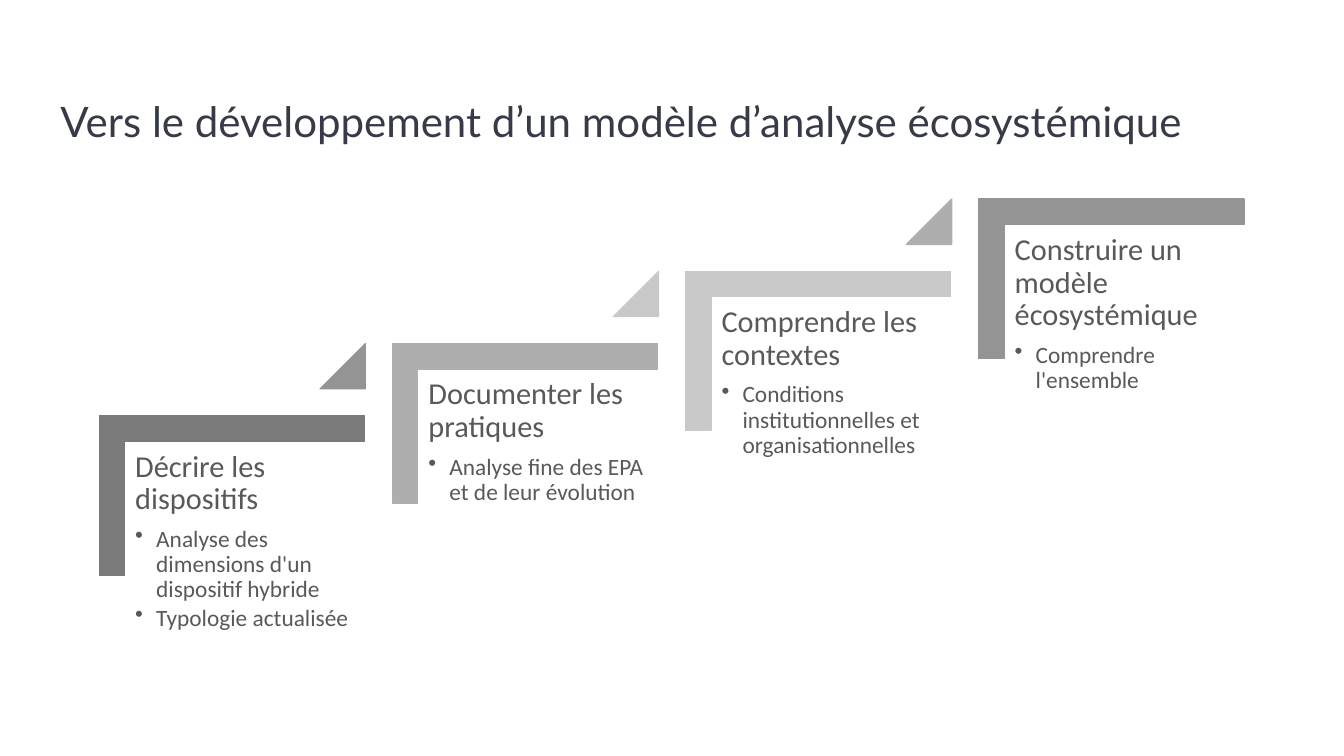
"""Build a slide showing four rising steps towards an ecosystemic model."""
from dataclasses import dataclass

from lxml import etree
from pptx import Presentation
from pptx import util as u
from pptx.dml.color import RGBColor
from pptx.enum import shapes, text
from pptx.oxml.ns import qn


@dataclass(frozen=True)
class Theme:
    """Hold the fonts, type sizes and colours."""
    title_font: str = "Lato"
    body_font: str = "Calibri"
    title_size: int = 36
    heading_size: int = 26
    bullet_size: int = 20
    title_color: str = "373B48"
    body_color: str = "595959"
    step_colors: tuple = ("7A7A7A", "AEAEAE", "C9C9C9", "949494")
    arrow_colors: tuple = ("949494", "C9C9C9", "AEAEAE")


class SlideBuilder:
    """Draw styled elements on the current slide."""

    def __init__(self, slide, theme):
        self.slide = slide
        self.theme = theme

    def add_run(self, paragraph, content, font_name, size, color):
        """Add one styled run to a paragraph."""
        run = paragraph.add_run()
        run.text = content
        run.font.name = font_name
        run.font.size = u.Pt(size)
        run.font.color.rgb = RGBColor.from_string(color)

    def add_text_frame(self, left, top, width, height, inset, wrap):
        """Add a text box and return its frame."""
        box = self.slide.shapes.add_textbox(*map(u.Inches, (left, top, width, height)))
        frame = box.text_frame
        frame.word_wrap = wrap
        frame.auto_size = text.MSO_AUTO_SIZE.NONE
        frame.vertical_anchor = text.MSO_ANCHOR.TOP
        frame.margin_left = frame.margin_right = u.Inches(inset)
        frame.margin_top = frame.margin_bottom = u.Inches(inset)
        return frame

    def add_title(self, content):
        """Add the slide title."""
        theme = self.theme
        frame = self.add_text_frame(0.72, 0.97, 13.5, 0.78, 0, False)
        paragraph = frame.paragraphs[0]
        paragraph.line_spacing = u.Pt(55.5)
        self.add_run(paragraph, content, theme.title_font, theme.title_size, theme.title_color)

    def add_solid(self, kind, left, top, width, height, color, adjustments, rotation=0):
        """Add a preset shape in one solid colour."""
        shape = self.slide.shapes.add_shape(kind, *map(u.Inches, (left, top, width, height)))
        shape.shadow.inherit = False
        shape.rotation = rotation
        for index, value in enumerate(adjustments):
            shape.adjustments[index] = value
        shape.fill.solid()
        shape.fill.fore_color.rgb = RGBColor.from_string(color)
        shape.line.color.rgb = RGBColor.from_string(color)
        shape.line.width = u.Pt(1)

    def add_bullet(self, paragraph):
        """Give a paragraph a hanging bullet."""
        paragraph.level = 1
        properties = paragraph._p.get_or_add_pPr()
        properties.set("marL", str(u.Inches(0.25)))
        properties.set("indent", str(-u.Inches(0.25)))
        etree.SubElement(properties, qn("a:buChar")).set("char", "•")

    def add_step_text(self, left, top, heading, bullets):
        """Add a step heading followed by its bullets."""
        theme = self.theme
        frame = self.add_text_frame(left, top, 2.85, 2.5, 0.11, True)
        paragraph = frame.paragraphs[0]
        paragraph.line_spacing = 0.9
        paragraph.space_after = u.Pt(theme.heading_size * 0.35)
        self.add_run(paragraph, heading, theme.body_font, theme.heading_size, theme.body_color)
        for bullet in bullets:
            paragraph = frame.add_paragraph()
            self.add_bullet(paragraph)
            paragraph.line_spacing = 0.9
            paragraph.space_after = u.Pt(theme.bullet_size * 0.15)
            self.add_run(paragraph, bullet, theme.body_font, theme.bullet_size, theme.body_color)

    def add_step(self, index, heading, bullets):
        """Add one stair step, with an arrow unless it is the last."""
        theme = self.theme
        across, rise = 3.49 * index, 0.86 * index
        self.add_solid(shapes.MSO_SHAPE.CORNER, 1.81 + across, 4.32 - rise, 1.9, 3.16,
                       theme.step_colors[index], (0.16, 0.16), 90)
        self.add_step_text(1.5 + across, 5.26 - rise, heading, bullets)
        if index < len(theme.arrow_colors):
            self.add_solid(shapes.MSO_SHAPE.ISOSCELES_TRIANGLE, 3.81 + across, 4.09 - rise,
                           0.54, 0.54, theme.arrow_colors[index], (1,))


STEPS = (
    ("Décrire les dispositifs",
     ("Analyse des dimensions d'un dispositif hybride", "Typologie actualisée")),
    ("Documenter les pratiques", ("Analyse fine des EPA et de leur évolution",)),
    ("Comprendre les contextes", ("Conditions institutionnelles et organisationnelles",)),
    ("Construire un modèle écosystémique", ("Comprendre l'ensemble",)),
)


def main():
    """Create and save the presentation."""
    presentation = Presentation()
    presentation.slide_width = u.Inches(16)
    presentation.slide_height = u.Inches(9)
    slide = presentation.slides.add_slide(presentation.slide_layouts[6])
    builder = SlideBuilder(slide, Theme())
    builder.add_title("Vers le développement d’un modèle d’analyse écosystémique")
    for index, (heading, bullets) in enumerate(STEPS):
        builder.add_step(index, heading, bullets)
    presentation.save("out.pptx")


if __name__ == "__main__":
    main()
